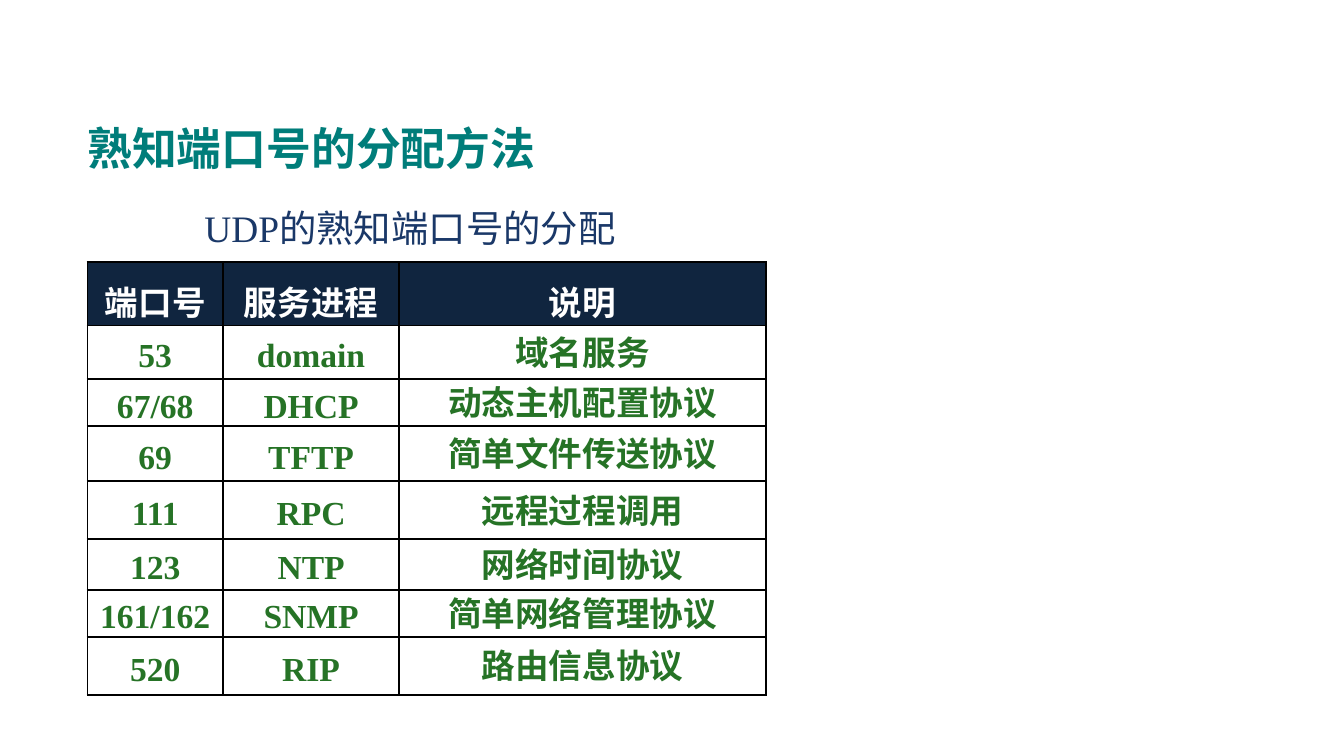
"""Build a slide listing the well-known UDP port numbers."""
from dataclasses import astuple, dataclass

from lxml.etree import SubElement
from pptx import Presentation
from pptx.dml.color import RGBColor
from pptx.enum.text import MSO_ANCHOR, MSO_AUTO_SIZE, PP_ALIGN
from pptx.oxml import parse_xml
from pptx.oxml.ns import nsdecls, qn
from pptx.slide import Slide
from pptx.table import _Cell
from pptx.text.text import _Paragraph
from pptx.util import Inches, Pt

TEAL = RGBColor(0x00, 0x7D, 0x7A)
BLUE = RGBColor(0x1A, 0x38, 0x68)
NAVY = RGBColor(0x10, 0x25, 0x3F)
GREEN = RGBColor(0x26, 0x73, 0x26)
WHITE = RGBColor(0xFF, 0xFF, 0xFF)
BLACK = RGBColor(0x00, 0x00, 0x00)
SERIF = "Times New Roman"
CHINESE = "Noto Sans CJK SC"


@dataclass
class Service:
    port: str
    process: str
    description: str


HEADING = Service("端口号", "服务进程", "说明")
SERVICES = [
    Service("53", "domain", "域名服务"),
    Service("67/68", "DHCP", "动态主机配置协议"),
    Service("69", "TFTP", "简单文件传送协议"),
    Service("111", "RPC", "远程过程调用"),
    Service("123", "NTP", "网络时间协议"),
    Service("161/162", "SNMP", "简单网络管理协议"),
    Service("520", "RIP", "路由信息协议"),
]
COLUMN_WIDTHS = [1.01, 1.31, 2.73]
ROW_HEIGHTS = [0.47, 0.4, 0.35, 0.41, 0.43, 0.38, 0.35, 0.43]


def format_runs(para: _Paragraph, size: int, color: RGBColor,
                bold: bool, font: str = SERIF) -> None:
    for span in para.runs:
        span.font.size = Pt(size)
        span.font.bold = bold
        span.font.color.rgb = color
        span.font.name = font
        SubElement(span.font._element, qn("a:ea"), typeface=CHINESE)


def add_borders(cell: _Cell) -> None:
    properties = cell._tc.get_or_add_tcPr()
    for index, side in enumerate(("lnL", "lnR", "lnT", "lnB")):
        border = parse_xml(
            f'<a:{side} {nsdecls("a")} w="{Pt(1)}"><a:solidFill>'
            f'<a:srgbClr val="{BLACK}"/></a:solidFill></a:{side}>')
        properties.insert(index, border)


def fill_cell(cell: _Cell, text: str, is_heading: bool, font: str) -> None:
    cell.vertical_anchor = MSO_ANCHOR.MIDDLE
    cell.margin_left = cell.margin_right = Inches(0.07)
    cell.margin_top = Inches(0 if is_heading else 0.17)
    cell.margin_bottom = 0
    cell.text_frame.text = text
    para = cell.text_frame.paragraphs[0]
    para.alignment = PP_ALIGN.CENTER
    para.line_spacing = 1.3 if is_heading else Pt(12)
    format_runs(para, 18, WHITE if is_heading else GREEN, True, font)
    if is_heading:
        cell.fill.solid()
        cell.fill.fore_color.rgb = NAVY
    else:
        cell.fill.background()
    add_borders(cell)


def add_title(page: Slide) -> None:
    box = page.shapes.title
    box.left, box.top, box.width, box.height = map(Inches, (0.55, 0.63, 7.03, 0.94))
    frame = box.text_frame
    frame.text = "熟知端口号的分配方法"
    frame.vertical_anchor = MSO_ANCHOR.MIDDLE
    frame.auto_size = MSO_AUTO_SIZE.NONE
    para = frame.paragraphs[0]
    para.alignment = PP_ALIGN.LEFT
    format_runs(para, 24, TEAL, True)


def add_caption(page: Slide) -> None:
    box = page.placeholders[1]
    box.left, box.top, box.width, box.height = map(Inches, (1.42, 1.48, 3.73, 0.55))
    frame = box.text_frame
    frame.text = "UDP的熟知端口号的分配"
    frame.auto_size = MSO_AUTO_SIZE.NONE
    para = frame.paragraphs[0]
    para.space_before = Pt(0)
    properties = para._p.get_or_add_pPr()
    properties.set("marL", str(Inches(0.38)))
    properties.set("indent", str(Inches(-0.38)))
    SubElement(properties, qn("a:buNone"))
    format_runs(para, 20, BLUE, False)


def add_port_table(page: Slide) -> None:
    table = page.shapes.add_table(
        len(ROW_HEIGHTS), len(COLUMN_WIDTHS), Inches(0.65), Inches(1.95),
        Inches(sum(COLUMN_WIDTHS)), Inches(sum(ROW_HEIGHTS))).table
    table.first_row = table.horz_banding = False
    for column, width in zip(table.columns, COLUMN_WIDTHS):
        column.width = Inches(width)
    for row, height in zip(table.rows, ROW_HEIGHTS):
        row.height = Inches(height)
    for row_index, service in enumerate([HEADING, *SERVICES]):
        is_heading = row_index == 0
        for column_index, text in enumerate(astuple(service)):
            font = CHINESE if column_index == 2 and not is_heading else SERIF
            fill_cell(table.cell(row_index, column_index), text, is_heading, font)


def main() -> None:
    deck = Presentation()
    deck.slide_width = Inches(10)
    deck.slide_height = Inches(10 * 9 / 16)
    page = deck.slides.add_slide(deck.slide_layouts[1])
    add_title(page)
    add_caption(page)
    add_port_table(page)
    deck.save("out.pptx")


if __name__ == "__main__":
    main()
